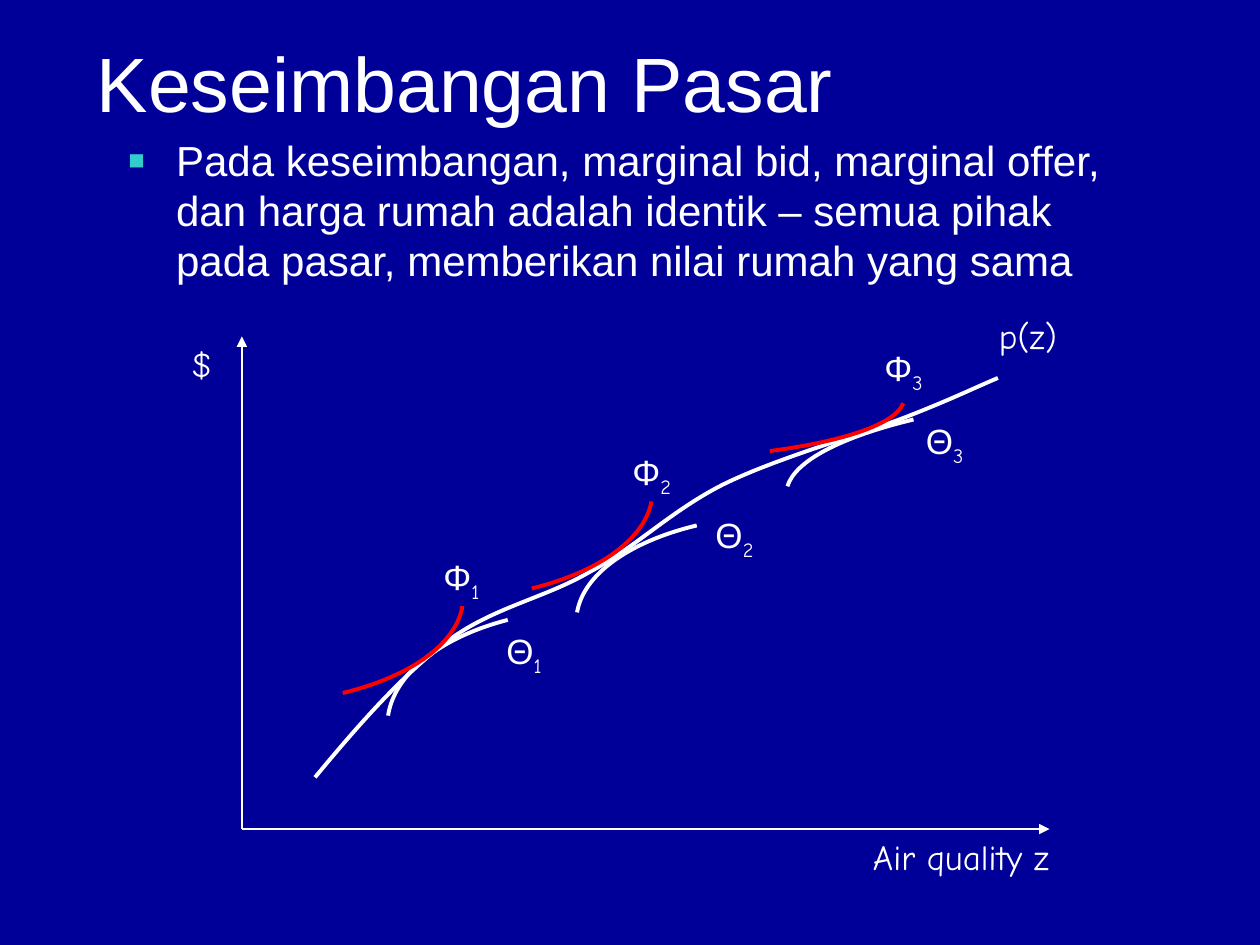
from lxml.etree import SubElement
from pptx import Presentation
from pptx.dml.color import RGBColor
from pptx.enum.shapes import MSO_CONNECTOR
from pptx.oxml.ns import qn
from pptx.util import Inches, Pt

THEME = {
    "back": "000099", "ink": "FFFFFF", "offer": "FF0000", "bullet": "33CCCC",
    "sans": "Arial", "hand": "Comic Neue",
    "title": 44, "body": 24, "label": 20, "leading": 28.6,
    "axis": 0.75, "curve": 2.25,
}

TITLE = "Keseimbangan Pasar"
BODY = ("Pada keseimbangan, marginal bid, marginal offer, dan harga rumah adalah "
        "identik – semua pihak pada pasar, memberikan nilai rumah yang sama")

ORIGIN = (1.92, 6.58)
AXIS_ENDS = [(1.92, 2.67), (8.33, 6.58)]

PRICE = [(2.5, 6.17), (2.84, 5.76), (3.19, 5.36), (3.55, 5.09),
         (3.91, 4.82), (4.32, 4.75), (4.68, 4.54),
         (5.05, 4.34), (5.32, 4.06), (5.73, 3.85),
         (6.15, 3.64), (6.83, 3.45), (7.19, 3.31),
         (7.55, 3.17), (7.73, 3.08), (7.92, 3)]
BIDS = [
    [(4.03, 4.92), (3.49, 5.06), (3.13, 5.35), (3.08, 5.68)],
    [(5.53, 4.17), (4.99, 4.3), (4.63, 4.56), (4.58, 4.86)],
    [(7.25, 3.33), (6.67, 3.47), (6.31, 3.66), (6.25, 3.86)],
]
OFFERS = [
    [(2.72, 5.5), (3.26, 5.37), (3.62, 5.11), (3.67, 4.81)],
    [(4.22, 4.67), (4.76, 4.54), (5.12, 4.27), (5.17, 3.98)],
    [(6.11, 3.58), (6.72, 3.5), (7.11, 3.36), (7.17, 3.2)],
]

AXIS_LABELS = [
    ("$", 1.42, 2.67, 0.36),
    ("p(z)", 7.83, 2.45, 0.7),
    ("Air quality z", 6.83, 6.58, 1.79),
]
CURVE_LABELS = {
    "Φ": [(3.42, 4.36), (4.92, 3.53), (6.92, 2.7)],
    "Θ": [(3.92, 4.95), (5.58, 4.03), (7.25, 3.28)],
}


def color(name):
    return RGBColor.from_string(THEME[name])


def style(r, size, font):
    r.font.size = Pt(THEME[size])
    r.font.name = THEME[font]
    r.font.color.rgb = color("ink")


def add_text(s, text, box, size, font, wrap=False, top=0.05):
    tf = s.shapes.add_textbox(*map(Inches, box)).text_frame
    tf.word_wrap = wrap
    tf.margin_top = Inches(top)
    tf.text = text
    style(tf.paragraphs[0].runs[0], size, font)
    return tf.paragraphs[0]


def add_bullet(p):
    pPr = p._p.get_or_add_pPr()
    pPr.set("marL", str(Inches(0.38)))
    pPr.set("indent", str(-Inches(0.38)))
    SubElement(SubElement(pPr, qn("a:buClr")), qn("a:srgbClr"), val=THEME["bullet"])
    SubElement(pPr, qn("a:buSzPct"), val="65000")
    SubElement(pPr, qn("a:buFont"), typeface=THEME["sans"])
    SubElement(pPr, qn("a:buChar"), char="■")
    p.line_spacing = Pt(THEME["leading"])


def add_axis(s, end):
    line = s.shapes.add_connector(MSO_CONNECTOR.STRAIGHT, *map(Inches, ORIGIN + end))
    line.line.color.rgb = color("ink")
    line.line.width = Pt(THEME["axis"])
    SubElement(line.line._get_or_add_ln(), qn("a:tailEnd"), type="triangle")
    SubElement(line._element.spPr, qn("a:effectLst"))


def add_curve(s, points, ink):
    start, *rest = [(Inches(x), Inches(y)) for x, y in points]
    builder = s.shapes.build_freeform(*start)
    builder.add_line_segments(rest, close=False)
    sp = builder.convert_to_shape()
    sp.shadow.inherit = False
    sp.fill.background()
    sp.line.color.rgb = color(ink)
    sp.line.width = Pt(THEME["curve"])
    outline = next(sp._element.iter(qn("a:path")))
    segments = outline.findall(qn("a:lnTo"))
    for i in range(0, len(segments), 3):
        bezier = SubElement(outline, qn("a:cubicBezTo"))
        for segment in segments[i:i + 3]:
            bezier.append(segment[0])
            outline.remove(segment)


def main():
    prs = Presentation()
    prs.slide_width, prs.slide_height = Inches(10), Inches(7.5)
    s = prs.slides.add_slide(prs.slide_layouts[6])
    s.background.fill.solid()
    s.background.fill.fore_color.rgb = color("back")

    add_text(s, TITLE, (0.67, 0.17, 8.5, 1.25), "title", "sans", True, 0.11)
    add_bullet(add_text(s, BODY, (0.92, 1, 8.3, 1), "body", "sans", True, 0.07))

    for end in AXIS_ENDS:
        add_axis(s, end)
    for points in [PRICE] + BIDS:
        add_curve(s, points, "ink")
    for points in OFFERS:
        add_curve(s, points, "offer")

    for text, x, y, w in AXIS_LABELS:
        add_text(s, text, (x, y, w, 0.43), "label", "hand")
    for symbol, spots in CURVE_LABELS.items():
        for number, (x, y) in enumerate(spots, 1):
            p = add_text(s, symbol, (x, y, 0.52, 0.43), "label", "sans")
            r = p.add_run()
            r.text = str(number)
            style(r, "label", "hand")
            r.font._element.set("baseline", "-25000")

    prs.save("out.pptx")


if __name__ == "__main__":
    main()
